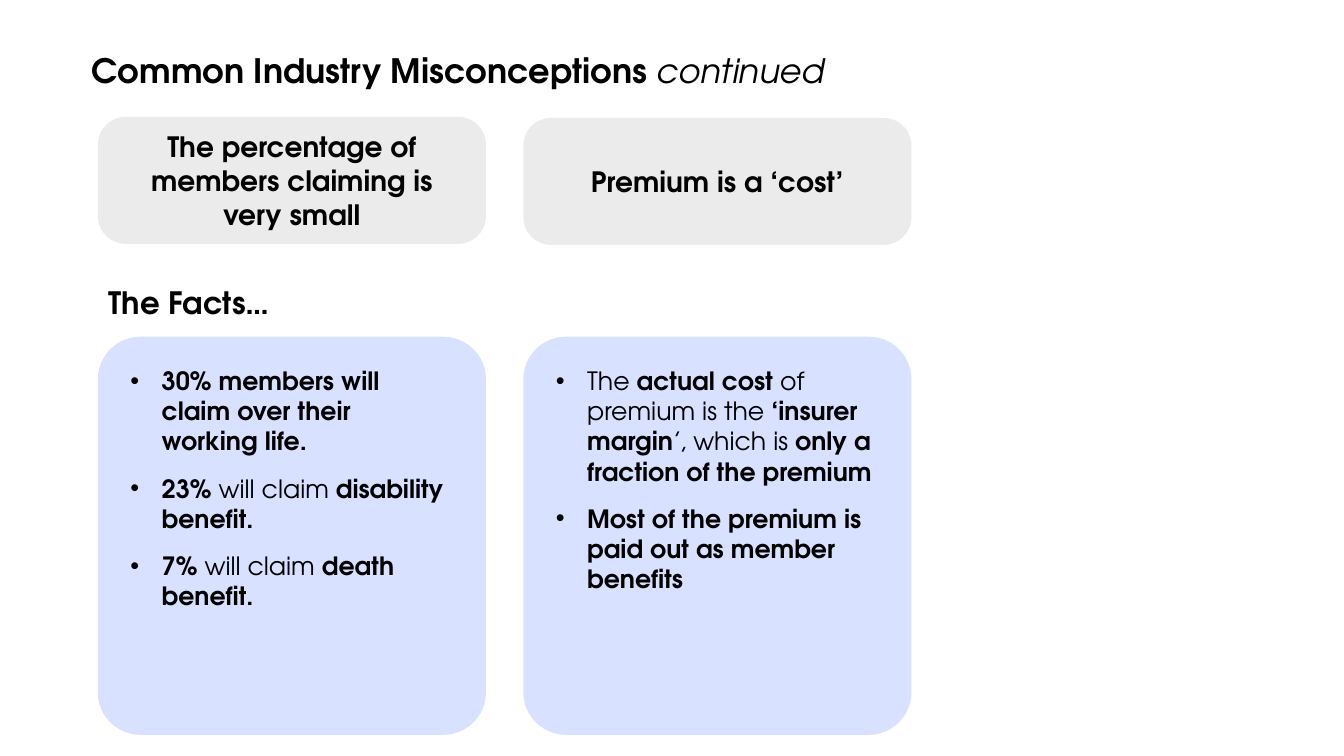
from lxml import etree
from pptx import Presentation
from pptx.dml.color import RGBColor
from pptx.enum.shapes import MSO_SHAPE
from pptx.enum.text import MSO_ANCHOR, MSO_AUTO_SIZE, PP_ALIGN
from pptx.oxml.ns import qn
from pptx.util import Inches, Pt

ROUNDED = MSO_SHAPE.ROUNDED_RECTANGLE
TOP, MIDDLE = MSO_ANCHOR.TOP, MSO_ANCHOR.MIDDLE
LEFT, CENTER = PP_ALIGN.LEFT, PP_ALIGN.CENTER
NO_AUTOFIT = MSO_AUTO_SIZE.NONE
TITLE_ONLY = 5

FONT = "TeX Gyre Adventor"
COLORS = {"text": "000000", "claim": "EBEBEB", "facts": "D8E1FF"}
CARD_WIDTH = 3.85

COLUMNS = [
    {
        "left": 0.97,
        "top": 1.16,
        "claim": "The percentage of members claiming is very small",
        "facts": [
            [("30% members will claim over their working life.", True)],
            [("23% ", True), ("will claim ", False), ("disability benefit.", True)],
            [("7% ", True), ("will claim ", False), ("death benefit.", True)],
        ],
    },
    {
        "left": 5.19,
        "top": 1.17,
        "claim": "Premium is a ‘cost’",
        "facts": [
            [
                ("The ", False),
                ("actual cost ", True),
                ("of premium is the ", False),
                ("‘insurer margin", True),
                ("’, which is ", False),
                ("only a fraction of the premium", True),
            ],
            [("Most of the premium is paid out as member benefits", True)],
        ],
    },
]


class SlideBuilder:
    def __init__(self, slide):
        self.slide = slide

    def frame(self, shape, anchor=TOP, horizontal=0, vertical=0):
        text_frame = shape.text_frame
        text_frame.word_wrap = True
        text_frame.auto_size = NO_AUTOFIT
        text_frame.vertical_anchor = anchor
        text_frame.margin_left = text_frame.margin_right = Inches(horizontal)
        text_frame.margin_top = text_frame.margin_bottom = Inches(vertical)
        return text_frame

    def add_runs(self, paragraph, parts, size, align=LEFT):
        paragraph.alignment = align
        for text, bold in parts:
            run = paragraph.add_run()
            run.text = text
            run.font.name = FONT
            run.font.size = Pt(size)
            run.font.bold = bold
            run.font.color.rgb = RGBColor.from_string(COLORS["text"])

    def title(self, text, suffix):
        shape = self.slide.shapes.title
        shape.left, shape.top = Inches(0.91), Inches(0.54)
        shape.width, shape.height = Inches(11.85), Inches(0.62)
        paragraph = self.frame(shape).paragraphs[0]
        paragraph.line_spacing = 0.9
        self.add_runs(paragraph, [(text, True), (suffix, False)], 24)
        paragraph.runs[-1].font.italic = True

    def heading(self, text, left, top, width, height):
        shape = self.slide.shapes.add_textbox(
            Inches(left), Inches(top), Inches(width), Inches(height)
        )
        self.add_runs(self.frame(shape).paragraphs[0], [(text, True)], 22)

    def card(self, left, top, height, color, corner, anchor):
        shape = self.slide.shapes.add_shape(
            ROUNDED, Inches(left), Inches(top), Inches(CARD_WIDTH), Inches(height)
        )
        shape.adjustments[0] = corner
        shape.shadow.inherit = False
        shape.fill.solid()
        shape.fill.fore_color.rgb = RGBColor.from_string(COLORS[color])
        shape.line.fill.background()
        return self.frame(shape, anchor, 0.2, 0.16)

    def claim_card(self, text, left, top):
        text_frame = self.card(left, top, 1.26, "claim", 0.22, MIDDLE)
        self.add_runs(text_frame.paragraphs[0], [(text, True)], 20, CENTER)

    def facts_card(self, facts, left, top):
        text_frame = self.card(left, top, 3.95, "facts", 0.11, TOP)
        for index, parts in enumerate(facts):
            paragraph = text_frame.add_paragraph() if index else text_frame.paragraphs[0]
            self.add_runs(paragraph, parts, 18)
            paragraph.space_before = paragraph.space_after = Pt(6)
            self.bullet(paragraph)

    def bullet(self, paragraph):
        properties = paragraph._p.get_or_add_pPr()
        indent = Inches(0.31)
        properties.set("marL", str(indent))
        properties.set("indent", str(-indent))
        etree.SubElement(properties, qn("a:buFont")).set("typeface", "Arial")
        etree.SubElement(properties, qn("a:buChar")).set("char", "•")


def main():
    presentation = Presentation()
    presentation.slide_width = Inches(13.33)
    presentation.slide_height = Inches(7.5)
    slide = presentation.slides.add_slide(presentation.slide_layouts[TITLE_ONLY])

    builder = SlideBuilder(slide)
    builder.title("Common Industry Misconceptions ", "continued")
    builder.heading("The Facts…", 1.08, 2.81, 2.85, 0.69)
    for column in COLUMNS:
        builder.claim_card(column["claim"], column["left"], column["top"])
        builder.facts_card(column["facts"], column["left"], 3.34)

    presentation.save("out.pptx")


if __name__ == "__main__":
    main()
